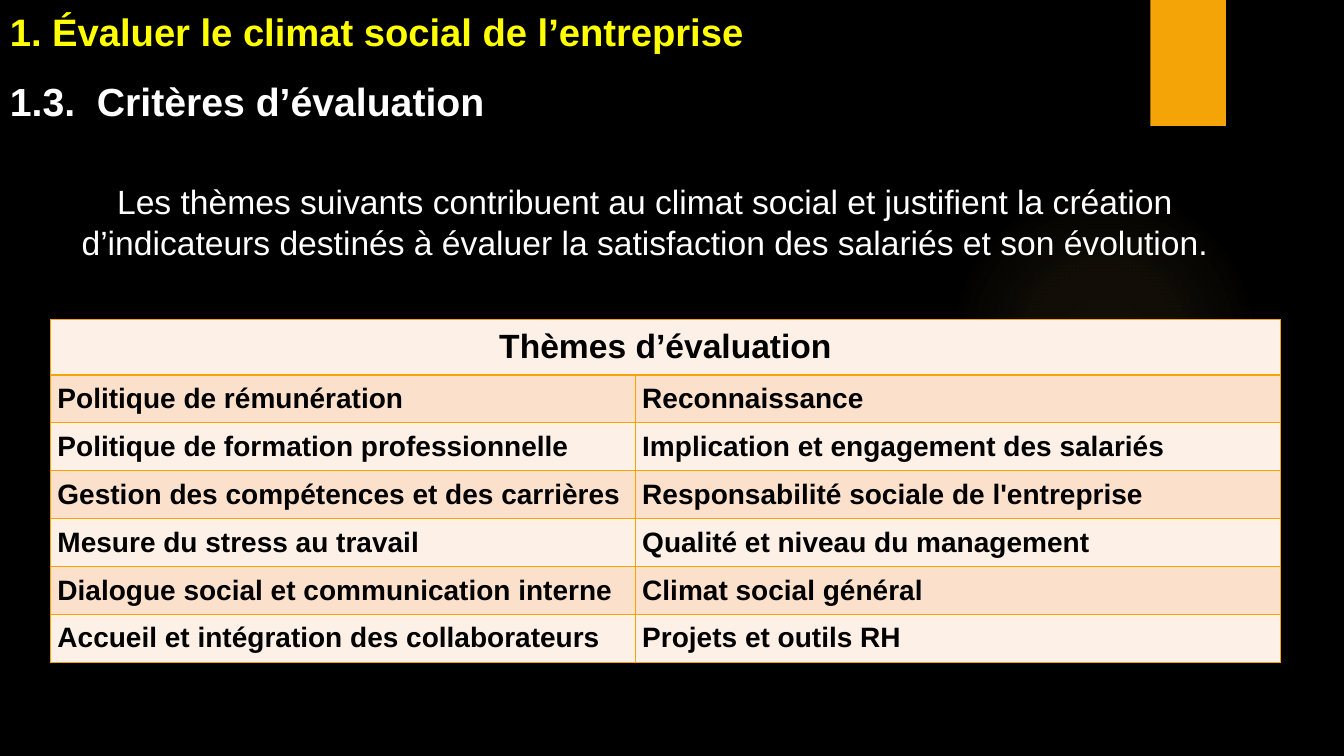
from dataclasses import dataclass

from lxml import etree
from pptx import Presentation
from pptx.dml.color import RGBColor
from pptx.enum.shapes import MSO_SHAPE
from pptx.enum.text import MSO_ANCHOR, PP_ALIGN
from pptx.oxml import parse_xml
from pptx.util import Inches, Pt

RECTANGLE, OVAL = MSO_SHAPE.RECTANGLE, MSO_SHAPE.OVAL
TOP, MIDDLE, BOTTOM = MSO_ANCHOR.TOP, MSO_ANCHOR.MIDDLE, MSO_ANCHOR.BOTTOM
LEFT, CENTER, JUSTIFY = PP_ALIGN.LEFT, PP_ALIGN.CENTER, PP_ALIGN.JUSTIFY
DRAWING = "http://schemas.openxmlformats.org/drawingml/2006/main"


@dataclass(frozen=True)
class Theme:
    font: str = "Arial"
    background: str = "000000"
    accent: str = "F5A408"
    glow: str = "FAC96A"
    title: str = "FFFF00"
    text: str = "FFFFFF"
    table_text: str = "000000"
    bands: tuple = ("FDF0E7", "FBE0CC")
    title_size: float = 27.3
    subtitle_size: float = 28
    body_size: float = 24
    row_size: float = 20
    border_width: float = 1


THEME = Theme()
THEMES_HEADER = "Thèmes d’évaluation"
THEMES = [
    ("Politique de rémunération", "Reconnaissance"),
    ("Politique de formation professionnelle", "Implication et engagement des salariés"),
    ("Gestion des compétences et des carrières", "Responsabilité sociale de l'entreprise"),
    ("Mesure du stress au travail", "Qualité et niveau du management"),
    ("Dialogue social et communication interne", "Climat social général"),
    ("Accueil et intégration des collaborateurs", "Projets et outils RH"),
]
INTRODUCTION = (
    "Les thèmes suivants contribuent au climat social et justifient la création "
    "d’indicateurs destinés à évaluer la satisfaction des salariés et son évolution."
)


def write(frame, text, size, color, bold=False, align=LEFT):
    paragraph = frame.paragraphs[0]
    paragraph.text = text
    paragraph.alignment = align
    font = paragraph.font
    font.name, font.size, font.bold = THEME.font, Pt(size), bold
    font.color.rgb = RGBColor.from_string(color)


def add_text(slide, box, text, size, color, bold=False, align=LEFT, anchor=TOP, inset=0.1):
    frame = slide.shapes.add_textbox(*map(Inches, box)).text_frame
    frame.word_wrap = True
    frame.vertical_anchor = anchor
    frame.margin_left = Inches(inset)
    write(frame, text, size, color, bold, align)


def add_plain_shape(slide, kind, box):
    shape = slide.shapes.add_shape(kind, *map(Inches, box))
    shape.shadow.inherit = False
    shape.line.fill.background()
    return shape


def add_glow(slide, box):
    """Place a disc that fades from its centre to nothing."""
    disc = add_plain_shape(slide, OVAL, box)
    disc.fill.background()
    stops = "".join(
        f'<a:gs pos="{place * 1000}"><a:srgbClr val="{THEME.glow}">'
        f'<a:alpha val="{opacity * 1000}"/></a:srgbClr></a:gs>'
        for place, opacity in ((0, 7), (36, 6), (69, 0))
    )
    gradient = parse_xml(
        f'<a:gradFill xmlns:a="{DRAWING}"><a:gsLst>{stops}</a:gsLst><a:path path="circle">'
        '<a:fillToRect l="50000" t="50000" r="50000" b="50000"/></a:path></a:gradFill>'
    )
    properties = disc.element.spPr
    properties.replace(properties.find(f"{{{DRAWING}}}noFill"), gradient)


def add_decoration(slide):
    add_glow(slide, (9.41, 1.83, 3.08, 3.08))
    tab = add_plain_shape(slide, RECTANGLE, (11.41, 0, 0.75, 1.25))
    tab.fill.solid()
    tab.fill.fore_color.rgb = RGBColor.from_string(THEME.accent)


def add_headings(slide):
    add_text(slide, (0, 0, 13.14, 0.59), "1. Évaluer le climat social de l’entreprise",
             THEME.title_size, THEME.title, bold=True, anchor=BOTTOM)
    add_text(slide, (0, 0.72, 6.73, 0.57), "1.3.  Critères d’évaluation",
             THEME.subtitle_size, THEME.text, bold=True, align=JUSTIFY)


def set_borders(cell):
    properties = cell._tc.get_or_add_tcPr()
    for position, side in enumerate(("lnL", "lnR", "lnT", "lnB")):
        line = etree.Element(f"{{{DRAWING}}}{side}", w=str(Pt(THEME.border_width)))
        fill = etree.SubElement(line, f"{{{DRAWING}}}solidFill")
        etree.SubElement(fill, f"{{{DRAWING}}}srgbClr", val=THEME.accent)
        properties.insert(position, line)


def add_themes_table(slide, box, column_shares, header_height):
    left, top, width, height = box
    row_height = (height - header_height) / len(THEMES)
    table = slide.shapes.add_table(len(THEMES) + 1, 2, *map(Inches, box)).table
    for column, share in zip(table.columns, column_shares):
        column.width = Inches(width * share / sum(column_shares))
    table.cell(0, 0).merge(table.cell(0, 1))
    for index, texts in enumerate([(THEMES_HEADER, ""), *THEMES]):
        is_header = index == 0
        table.rows[index].height = Inches(header_height if is_header else row_height)
        for cell, text in zip(table.rows[index].cells, texts):
            cell.fill.solid()
            cell.fill.fore_color.rgb = RGBColor.from_string(THEME.bands[index % 2])
            cell.vertical_anchor = MIDDLE
            cell.margin_left = cell.margin_right = Inches(0.07)
            cell.margin_top = cell.margin_bottom = 0
            set_borders(cell)
            if text:
                write(cell.text_frame, text,
                      THEME.body_size if is_header else THEME.row_size,
                      THEME.table_text, True, CENTER if is_header else JUSTIFY)


def build_criteria_slide(presentation):
    slide = presentation.slides.add_slide(presentation.slide_layouts[6])
    slide.background.fill.solid()
    slide.background.fill.fore_color.rgb = RGBColor.from_string(THEME.background)
    add_decoration(slide)
    add_headings(slide)
    add_text(slide, (-0.7, 1.75, 13.41, 0.91), INTRODUCTION,
             THEME.body_size, THEME.text, align=CENTER, inset=0.88)
    add_themes_table(slide, (0.5, 3.17, 12.2, 3.4), (5.8, 6.4), 0.55)


def main():
    presentation = Presentation()
    presentation.slide_width, presentation.slide_height = Inches(13.33), Inches(7.5)
    build_criteria_slide(presentation)
    presentation.save("out.pptx")


if __name__ == "__main__":
    main()
